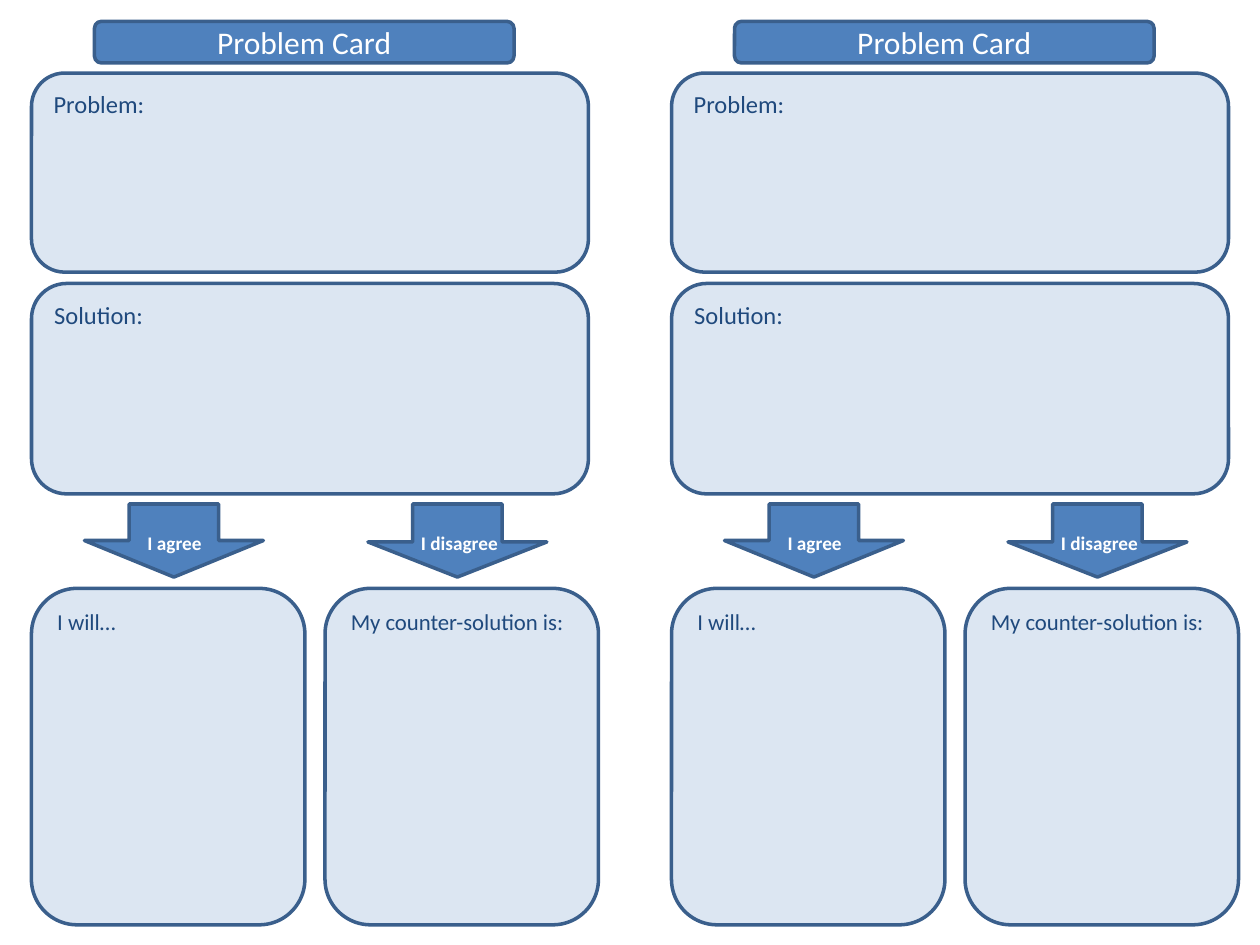
from pptx import Presentation
from pptx import util as u
from pptx.dml.color import RGBColor
from pptx.enum import shapes, text

PALE = RGBColor(0xDC, 0xE6, 0xF2)
BLUE = RGBColor(0x4F, 0x81, 0xBD)
EDGE = RGBColor(0x3A, 0x5F, 0x8C)
NAVY = RGBColor(0x1F, 0x49, 0x7D)
WHITE = RGBColor(0xFF, 0xFF, 0xFF)

ROUND = shapes.MSO_SHAPE.ROUNDED_RECTANGLE
ARROW = shapes.MSO_SHAPE.DOWN_ARROW
LEFT, CENTER = text.PP_ALIGN.LEFT, text.PP_ALIGN.CENTER
TOP, MIDDLE = text.MSO_ANCHOR.TOP, text.MSO_ANCHOR.MIDDLE

CARD_LEFTS = (0.25, 5.33)
TITLE = ("Problem Card", (0.5, 0.17, 3.33, 0.33))
PANELS = [
    ("Problem:", 14, (0, 0.58, 4.42, 1.58)),
    ("Solution:", 14, (0, 2.25, 4.42, 1.67)),
    ("I will…", 13, (0, 4.67, 2.17, 2.67)),
    ("My counter-solution is:", 13, (2.33, 4.67, 2.17, 2.67)),
]
CHOICES = [
    ("I agree", 0.42, 0.75, 0.5),
    ("I disagree", 2.67, 2.92, 0.48),
]


def place(card_left, area):
    left, top, width, height = area
    return [u.Inches(value) for value in (card_left + left, top, width, height)]


def add_box(parent, kind, area, fill):
    box = parent.add_shape(kind, *area)
    box.shadow.inherit = False
    box.fill.solid()
    box.fill.fore_color.rgb = fill
    box.line.color.rgb = EDGE
    box.line.width = u.Pt(2)
    return box


def write(box, words, size, color, align=LEFT, anchor=TOP, bold=False):
    frame = box.text_frame
    frame.word_wrap = True
    frame.vertical_anchor = anchor
    para = frame.paragraphs[0]
    para.alignment = align
    span = para.add_run()
    span.text = words
    font_format = {"name": "Calibri", "size": u.Pt(size), "bold": bold}
    for name, value in font_format.items():
        setattr(span.font, name, value)
    span.font.color.rgb = color


def add_choice(page, card_left, words, arrow_left, label_left, head):
    group = page.shapes.add_group_shape()
    arrow_area = place(card_left, (arrow_left, 4, 1.42, 0.58))
    arrow = add_box(group.shapes, ARROW, arrow_area, BLUE)
    arrow.adjustments[0] = 0.5
    arrow.adjustments[1] = head
    label_area = place(card_left, (label_left, 4.17, 0.92, 0.29))
    label = group.shapes.add_textbox(*label_area)
    label.text_frame.margin_left = u.Inches(0.17)
    write(label, words, 11, WHITE, bold=True)


def add_card(page, card_left):
    for words, size, area in PANELS:
        panel = add_box(page.shapes, ROUND, place(card_left, area), PALE)
        write(panel, words, size, NAVY)
    for choice in CHOICES:
        add_choice(page, card_left, *choice)
    words, area = TITLE
    title = add_box(page.shapes, ROUND, place(card_left, area), BLUE)
    write(title, words, 18, WHITE, CENTER, MIDDLE)


def main():
    deck = Presentation()
    deck.slide_width, deck.slide_height = u.Inches(10), u.Inches(7.5)
    page = deck.slides.add_slide(deck.slide_layouts[6])
    for card_left in CARD_LEFTS:
        add_card(page, card_left)
    deck.save("out.pptx")


if __name__ == "__main__":
    main()
